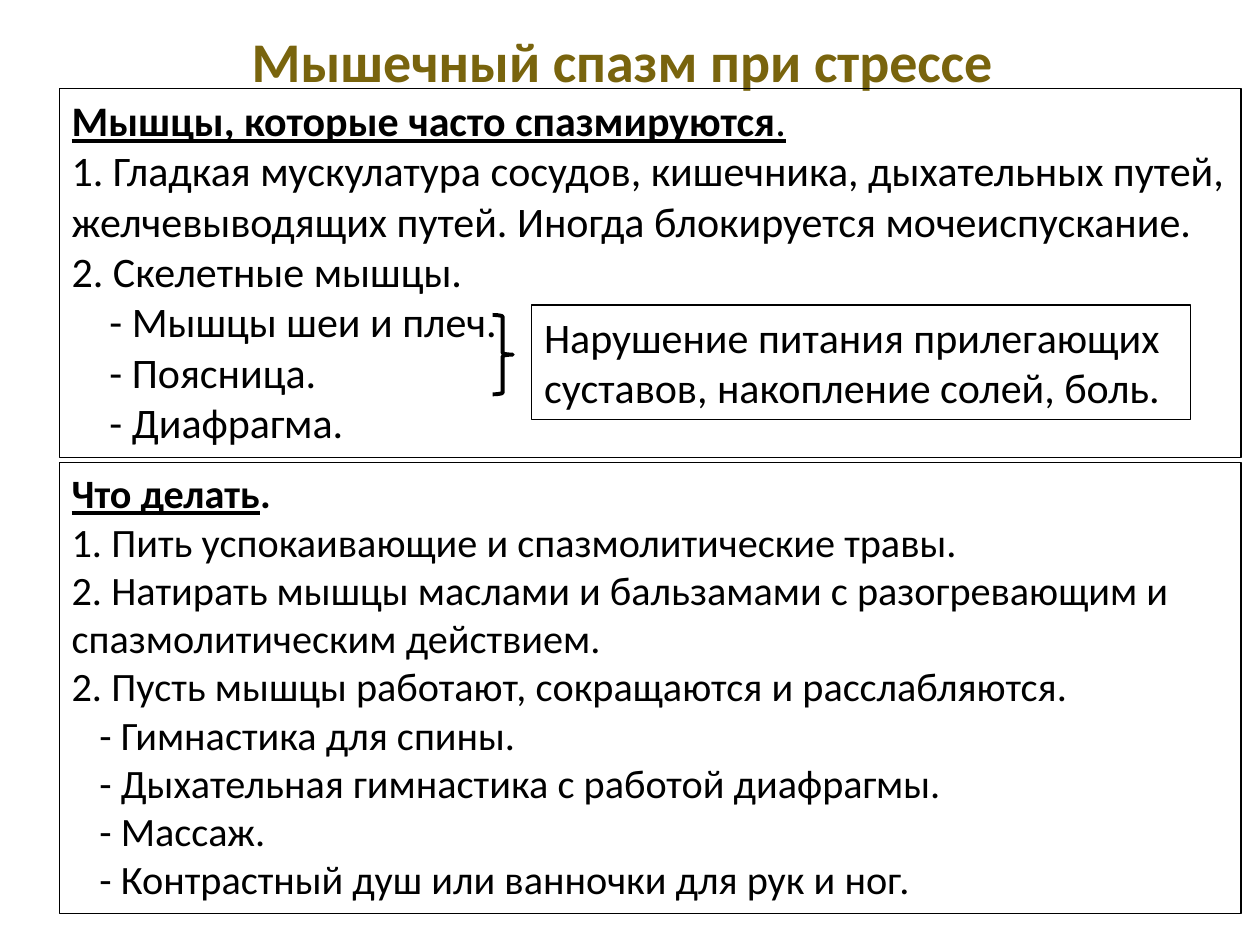
"""Build a slide about muscle spasm under stress."""
from pptx import Presentation
from pptx.dml.color import RGBColor
from pptx.enum.shapes import MSO_SHAPE
from pptx.enum.text import MSO_ANCHOR, PP_ALIGN
from pptx.util import Inches, Pt


def color(value):
    return RGBColor.from_string(value)


class SlideBuilder:
    font = "Calibri"
    ink = "000000"
    accent = "79640D"

    def __init__(self, deck):
        self.page = deck.slides.add_slide(deck.slide_layouts[5])

    def add_span(self, para, text, size, bold=False, underline=False, ink=None):
        span = para.add_run()
        span.text = text
        span.font.name = self.font
        span.font.size = Pt(size)
        span.font.bold = bold
        span.font.underline = underline
        span.font.color.rgb = color(ink or self.ink)

    def frame(self, shape, anchor):
        frame = shape.text_frame
        frame.word_wrap = True
        frame.vertical_anchor = anchor
        frame.margin_left = frame.margin_right = Inches(0.1)
        frame.margin_top = frame.margin_bottom = Inches(0.05)
        return frame

    def title(self, text, left, top, width, height):
        box = self.page.shapes.title
        box.left, box.top = Inches(left), Inches(top)
        box.width, box.height = Inches(width), Inches(height)
        frame = self.frame(box, MSO_ANCHOR.TOP)
        frame.word_wrap = False
        para = frame.paragraphs[0]
        para.alignment = PP_ALIGN.CENTER
        self.add_span(para, text, 32, bold=True, ink=self.accent)

    def outline(self, kind, left, top, width, height, weight):
        shape = self.page.shapes.add_shape(
            kind, Inches(left), Inches(top), Inches(width), Inches(height))
        shape.shadow.inherit = False
        shape.fill.background()
        shape.line.color.rgb = color(self.ink)
        shape.line.width = Pt(weight)
        return shape

    def panel(self, left, top, width, height, size, lines, indent=0.0):
        box = self.outline(MSO_SHAPE.RECTANGLE, left, top, width, height, 0.75)
        frame = self.frame(box, MSO_ANCHOR.TOP)
        for number, line in enumerate(lines):
            para = frame.add_paragraph() if number else frame.paragraphs[0]
            para.alignment = PP_ALIGN.LEFT
            spans = [(line, False, False)] if isinstance(line, str) else line
            if spans[0][0].startswith("- "):
                para._p.get_or_add_pPr().set("marL", str(Inches(indent)))
            for text, bold, underline in spans:
                self.add_span(para, text, size, bold, underline)

    def brace(self, left, top, width, height):
        self.outline(MSO_SHAPE.RIGHT_BRACE, left, top, width, height, 2.25)


def main():
    deck = Presentation()
    deck.slide_width, deck.slide_height = Inches(10), Inches(7.5)
    slide = SlideBuilder(deck)
    slide.title("Мышечный спазм при стрессе", 1.87, 0.16, 6.14, 0.64)
    slide.panel(0.47, 0.7, 9.38, 2.93, 24, [
        [("Мышцы, которые часто спазмируются", True, True), (".", False, True)],
        "1. Гладкая мускулатура сосудов, кишечника, дыхательных путей, "
        "желчевыводящих путей. Иногда блокируется мочеиспускание.",
        "2. Скелетные мышцы.",
        "- Мышцы шеи и плеч.",
        "- Поясница.",
        "- Диафрагма.",
    ], indent=0.3)
    slide.brace(3.91, 2.5, 0.16, 0.63)
    slide.panel(4.22, 2.42, 5.23, 0.91, 24, [
        "Нарушение питания прилегающих суставов, накопление солей, боль.",
    ])
    slide.panel(0.47, 3.67, 9.38, 3.58, 23, [
        [("Что делать", True, True), (".", True, False)],
        "1. Пить успокаивающие и спазмолитические травы.",
        "2. Натирать мышцы маслами и бальзамами с разогревающим и "
        "спазмолитическим действием.",
        "2. Пусть мышцы работают, сокращаются и расслабляются.",
        "- Гимнастика для спины.",
        "- Дыхательная гимнастика с работой диафрагмы.",
        "- Массаж.",
        "- Контрастный душ или ванночки для рук и ног.",
    ], indent=0.22)
    deck.save("out.pptx")


if __name__ == "__main__":
    main()
